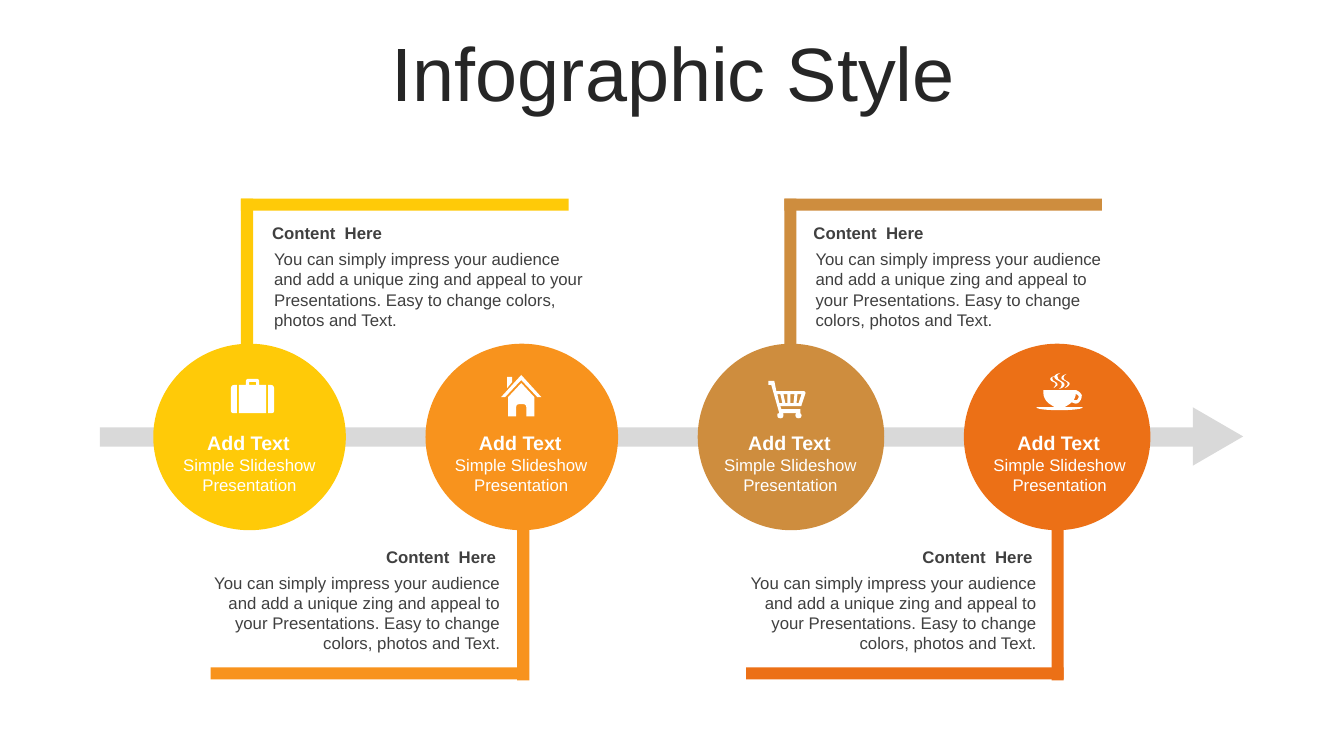
from pptx import Presentation
from pptx import util as u
from pptx.dml.color import RGBColor
from pptx.enum import shapes, text

GOLD = RGBColor(0xFF, 0xCA, 0x08)
ORANGE = RGBColor(0xF8, 0x93, 0x1D)
BRONZE = RGBColor(0xCE, 0x8D, 0x3E)
RUST = RGBColor(0xEC, 0x70, 0x16)
GREY = RGBColor(0xD9, 0xD9, 0xD9)
WHITE = RGBColor(0xFF, 0xFF, 0xFF)
DARK = RGBColor(0x26, 0x26, 0x26)
BODY = RGBColor(0x40, 0x40, 0x40)

SHAPE = shapes.MSO_SHAPE
LEFT, MID, RIGHT = text.PP_ALIGN.LEFT, text.PP_ALIGN.CENTER, text.PP_ALIGN.RIGHT

CASE = """37,6 40,6 42,6:43,8:43,10 43,31 43,33:42,34:40,34 37,34
3,6 6,6 6,34 3,34 1,34:0,33:0,31 0,10 0,8:1,6:3,6
19,3 18,3:18,3:18,4 18,6 25,6 25,4 25,3:25,3:24,3
17,0 26,0 27,0:28,1:28,2 28,6 35,6 35,34 8,34 8,6 15,6 15,2 15,1:16,0:17,0"""
HOUSE = """20,8 33,22 33,41 25,41 25,32 25,30:24,29:22,29 18,29 16,29:15,30:15,32 15,41 7,41 7,22
6,2 11,2 11,7 6,13
20,0 40,22 36,22 20,5 4,22 0,22"""
CART = """29,13 28,22 30,22 33,13
22,13 22,22 25,22 26,13
15,13 17,22 19,22 19,13
9,13 11,22 14,22 12,13
6,0 8,10 35,10 36,10:37,11:37,12 33,24 33,25:32,25:32,25 12,25 13,28 32,28 32,32 31,32
 32,32:33,33:33,34 33,36:32,37:30,37 28,37:27,36:27,34 27,33:27,32:29,32 14,32
 15,32:15,33:15,34 15,36:14,37:12,37 10,37:9,36:9,34 9,33:9,32:11,32 3,4 0,4 0,0 5,0"""
CUP = """39,21 39,23:38,25:37,27 38,27:39,27:40,27 41,26:42,25:42,23 41,22:40,21:39,21
39,17 42,18:44,20:45,22 45,25:44,28:41,30 39,31:37,30:35,29 34,30:33,31:31,32
 30,33:29,33:28,34 46,34 46,36:35,37:23,37 10,37:0,36:0,34 18,34 17,33:16,33:15,32 9,29:6,23:7,17
18,3 17,4:15,4:16,6 16,9:21,8:21,12 20,13:19,14:17,15 18,13:19,13:19,11 19,9:15,9:14,7 13,5:15,4:18,3
30,1 28,2:27,3:27,5 27,8:33,8:33,11 32,13:31,14:28,15 30,13:31,12:31,11 31,8:27,8:25,6 24,4:26,2:30,1
24,0 22,1:20,2:21,4 21,8:28,8:28,12 27,14:26,15:22,16 24,15:25,14:25,11 25,8:20,8:18,5 17,3:19,1:24,0"""

PITCH = ("You can simply impress your audience and add a unique zing and appeal "
         "to your Presentations. Easy to change colors, photos and Text.")


class Board:
    def __init__(self, slide, font):
        self.slide = slide
        self.font = font

    def paint(self, shape, color):
        shape.shadow.inherit = False
        shape.fill.solid()
        shape.fill.fore_color.rgb = color
        shape.line.fill.background()

    def block(self, kind, box, color, turn=0):
        shape = self.slide.shapes.add_shape(kind, *map(u.Inches, box))
        shape.rotation = turn
        self.paint(shape, color)

    def label(self, words, box, size, color, align=MID, bold=False):
        frame = self.slide.shapes.add_textbox(*map(u.Inches, box)).text_frame
        frame.word_wrap = True
        frame.text = words
        para = frame.paragraphs[0]
        para.alignment = align
        font = para.runs[0].font
        font.name, font.size, font.bold = self.font, u.Pt(size), bold
        font.color.rgb = color
        return frame

    def trace(self, line):
        dots = []
        for part in line.split():
            ends = [tuple(map(int, pair.split(","))) for pair in part.split(":")]
            if len(ends) == 1:
                dots += ends
                continue
            knots = [dots[-1]] + ends
            for step in range(1, 7):
                t = step / 6
                mix = ((1 - t) ** 3, 3 * t * (1 - t) ** 2, 3 * t * t * (1 - t), t ** 3)
                dots.append(tuple(sum(m * k[axis] for m, k in zip(mix, knots))
                                  for axis in (0, 1)))
        return dots

    def icon(self, art, left, top):
        pen = None
        for line in art.replace("\n ", " ").split("\n"):
            dots = [(u.Inches(left + x / 100), u.Inches(top + y / 100))
                    for x, y in self.trace(line)]
            if pen is None:
                pen = self.slide.shapes.build_freeform(*dots[0])
            else:
                pen.move_to(*dots[0])
            pen.add_line_segments(dots[1:], close=True)
        self.paint(pen.convert_to_shape(), WHITE)

    def bracket(self, color, post, beam, width, high):
        self.block(SHAPE.RECTANGLE, (beam, 1.97 if high else 6.62, width, 0.12), color)
        self.block(SHAPE.RECTANGLE, (post, 1.97 if high else 5.21, 0.12, 1.54), color)

    def step(self, left, width):
        self.label("Add Text", (left, 4.23, width, 0.34), 14, WHITE, bold=True)
        self.label("Simple Slideshow Presentation", (left + 0.01, 4.46, width, 0.5), 12, WHITE)

    def note(self, left, width, high):
        top, align = (2.16, LEFT) if high else (5.37, RIGHT)
        shift = 0.02 if high else 0.01
        self.label(PITCH, (left + shift, top + 0.26, width + 0.03, 0.91), 12, BODY, align)
        self.label("Content  Here", (left, top, width, 0.3), 12, BODY, align, True)


def main():
    deck = Presentation()
    deck.slide_width, deck.slide_height = u.Inches(13.33), u.Inches(7.5)
    board = Board(deck.slides.add_slide(deck.slide_layouts[6]), "Arial")

    title = board.label("Infographic Style", (0.35, 0.37, 12.66, 0.79), 54, DARK)
    title.vertical_anchor = text.MSO_ANCHOR.MIDDLE
    title.paragraphs[0].line_spacing = 0.9
    title.paragraphs[0].space_before = u.Pt(10)

    for bracket in ((ORANGE, 5.13, 2.09, 3.15, False), (RUST, 10.43, 7.4, 3.15, False),
                    (BRONZE, 7.78, 7.78, 3.15, True), (GOLD, 2.39, 2.39, 3.25, True)):
        board.bracket(*bracket)

    board.block(SHAPE.RECTANGLE, (0.99, 4.24, 10.91, 0.19), GREY)
    board.block(SHAPE.ISOSCELES_TRIANGLE, (11.79, 4.08, 0.58, 0.5), GREY, 90)
    for left, width, color in ((9.56, 1.85, RUST), (6.92, 1.85, BRONZE),
                               (4.22, 1.91, ORANGE), (1.52, 1.91, GOLD)):
        board.block(SHAPE.OVAL, (left, 3.41, width, 1.85), color)

    for left, width in ((1.5, 1.93), (4.22, 1.88), (6.89, 1.88), (9.56, 1.88)):
        board.step(left, width)
    for left, width, high in ((1.86, 3.16, False), (7.18, 3.16, False),
                              (2.6, 3.26, True), (7.97, 3.16, True)):
        board.note(left, width, high)
    for art, left, top in ((CART, 7.62, 3.78), (HOUSE, 4.97, 3.72),
                           (CUP, 10.28, 3.7), (CASE, 2.29, 3.76)):
        board.icon(art, left, top)

    deck.save("out.pptx")


if __name__ == "__main__":
    main()
